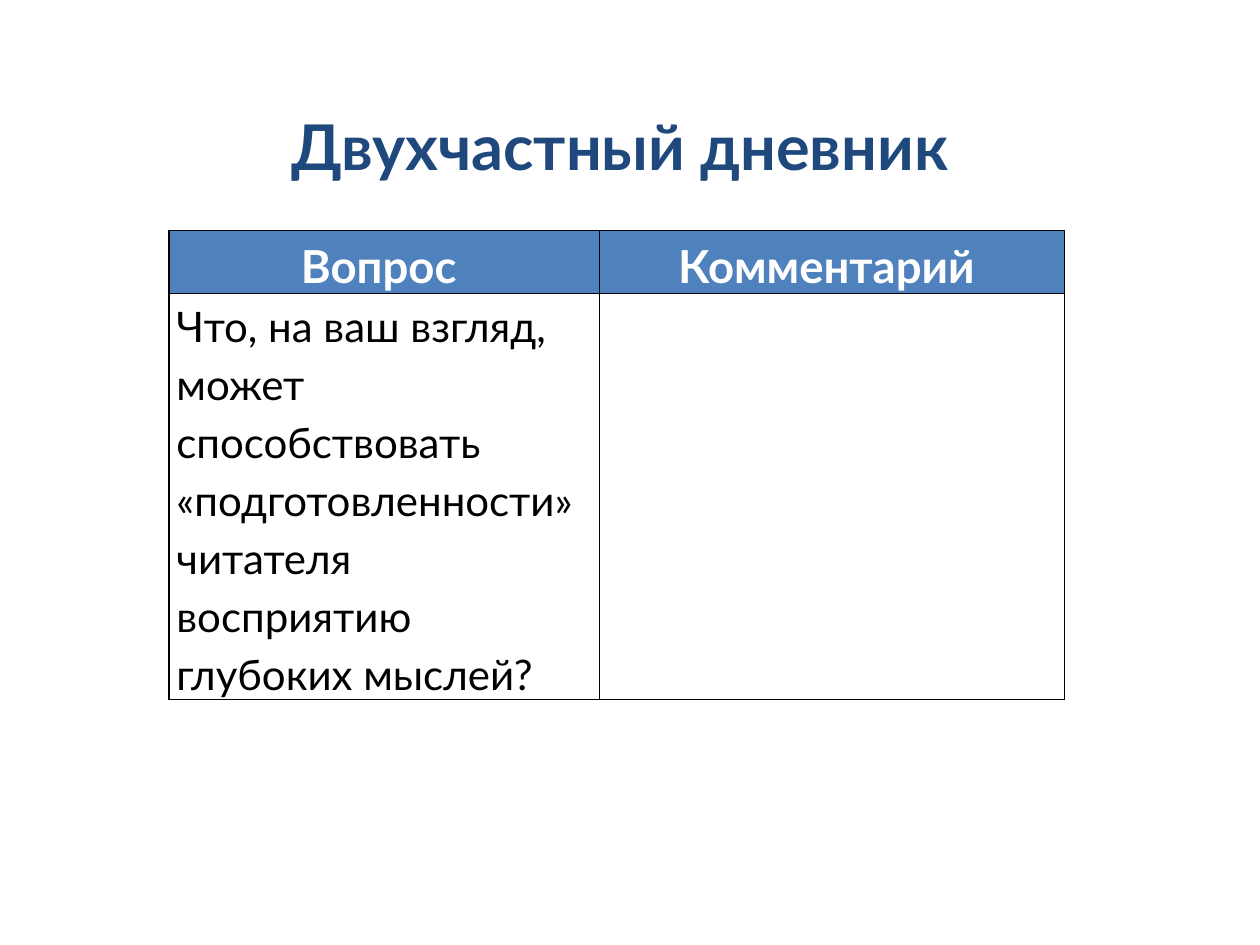
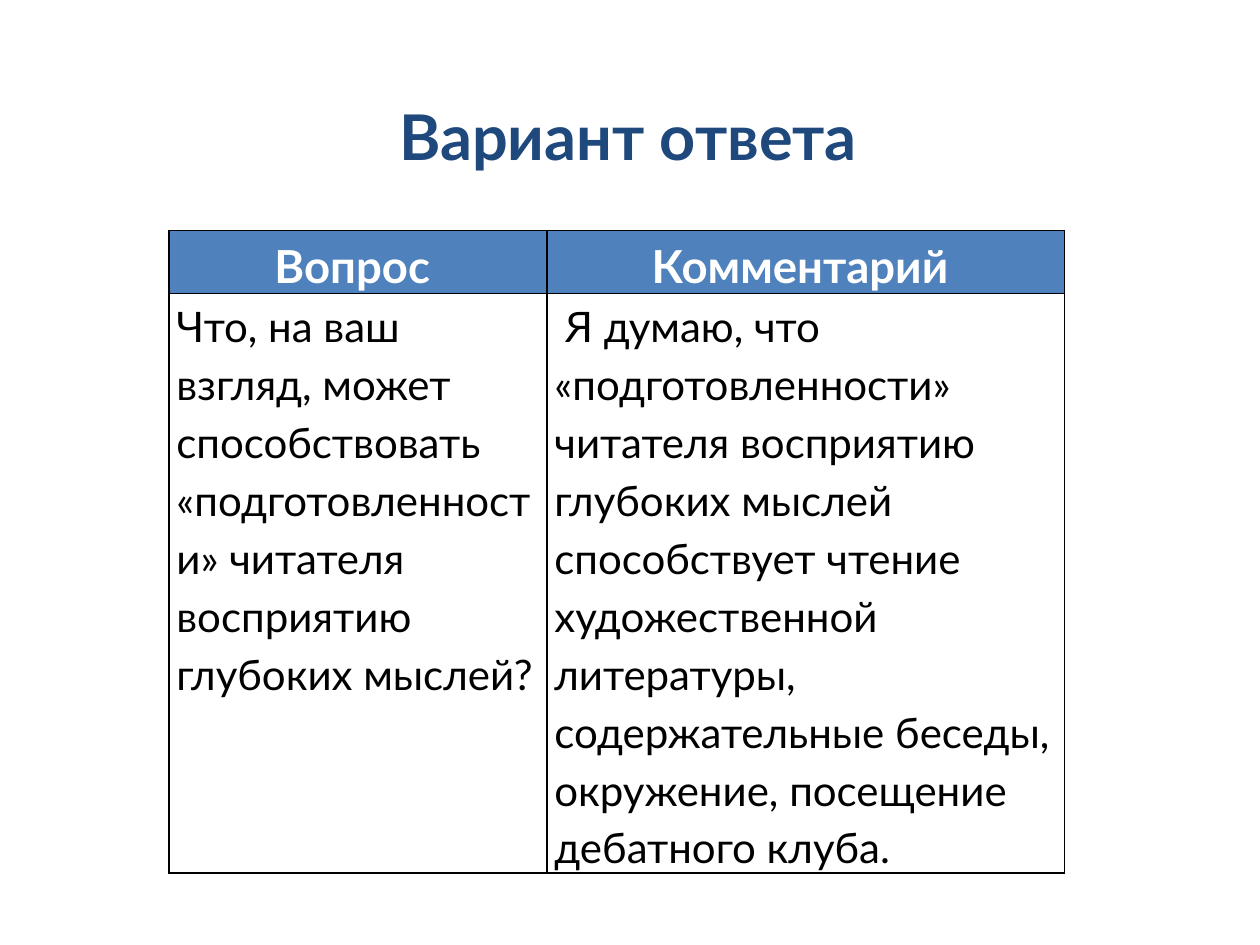
"""Build two slides with a two-part diary table: the question and a sample answer."""
from lxml.etree import SubElement
from pptx import Presentation
from pptx.dml.color import RGBColor
from pptx.enum.text import MSO_ANCHOR, PP_ALIGN
from pptx.oxml.ns import qn
from pptx.util import Inches, Pt

FONT = "Lato"
NAVY = RGBColor(0x1F, 0x49, 0x7D)
BLUE = RGBColor(0x4F, 0x81, 0xBD)
WHITE = RGBColor(0xFF, 0xFF, 0xFF)
BLACK = RGBColor(0x00, 0x00, 0x00)

HEADINGS = ["Вопрос ", "Комментарий "]
QUESTION = ("Что, на ваш взгляд, может способствовать «подготовленности» "
            "читателя восприятию глубоких мыслей?")
ANSWER = (" Я думаю, что «подготовленности» читателя восприятию глубоких мыслей "
          "способствует чтение художественной литературы, содержательные беседы, "
          "окружение, посещение")
ANSWER_END = "дебатного клуба."
HEADER_HEIGHT = 0.5

PAGES = [
    {"title": "Двухчастный дневник", "title_at": (1.14, 0.8, 7.56, 0.71),
     "title_spacing": 1.0, "columns": (3.42, 3.69), "body_height": 3.22,
     "body": [[QUESTION], []]},
    {"title": "Вариант ответа", "title_at": (1.9, 0.69, 6.17, 0.53),
     "title_spacing": 1.06, "columns": (3, 4.11), "body_height": 4.6,
     "body": [[QUESTION], [ANSWER, ANSWER_END]]},
]


def write(frame, lines, size, color, bold, align, spacing):
    frame.word_wrap = True
    for index, line in enumerate(lines):
        para = frame.paragraphs[0] if index == 0 else frame.add_paragraph()
        para.alignment = align
        para.line_spacing = spacing
        span = para.add_run()
        span.text = line
        span.font.name = FONT
        span.font.size = Pt(size)
        span.font.bold = bold
        span.font.color.rgb = color


def style_cell(cell, fill_color):
    cell.margin_left = cell.margin_right = Inches(0.06)
    cell.margin_top = cell.margin_bottom = 0
    cell.vertical_anchor = MSO_ANCHOR.TOP
    properties = cell._tc.get_or_add_tcPr()
    for side in ("a:lnL", "a:lnR", "a:lnT", "a:lnB"):
        border = SubElement(properties, qn(side), w=str(Pt(1)))
        border_fill = SubElement(border, qn("a:solidFill"))
        SubElement(border_fill, qn("a:srgbClr"), val=str(BLACK))
    if fill_color is None:
        cell.fill.background()
    else:
        cell.fill.solid()
        cell.fill.fore_color.rgb = fill_color


deck = Presentation()
deck.slide_width = Inches(10)
deck.slide_height = Inches(7.5)

for content in PAGES:
    page = deck.slides.add_slide(deck.slide_layouts[6])

    box = page.shapes.add_textbox(*map(Inches, content["title_at"]))
    write(box.text_frame, [content["title"]], 36, NAVY, True,
          PP_ALIGN.CENTER, content["title_spacing"])

    widths = content["columns"]
    row_heights = (HEADER_HEIGHT, content["body_height"])
    table = page.shapes.add_table(2, 2, Inches(1.34), Inches(1.83),
                                  Inches(sum(widths)), Inches(sum(row_heights))).table
    table.first_row = False
    table.horz_banding = False
    for row, height in zip(table.rows, row_heights):
        row.height = Inches(height)
    for index, width in enumerate(widths):
        table.columns[index].width = Inches(width)
        header, body = table.cell(0, index), table.cell(1, index)
        style_cell(header, BLUE)
        style_cell(body, None)
        write(header.text_frame, [HEADINGS[index]], 26, WHITE, True, PP_ALIGN.CENTER, 1.15)
        write(body.text_frame, content["body"][index], 24, BLACK, False, PP_ALIGN.LEFT, 1.15)

deck.save("out.pptx")
